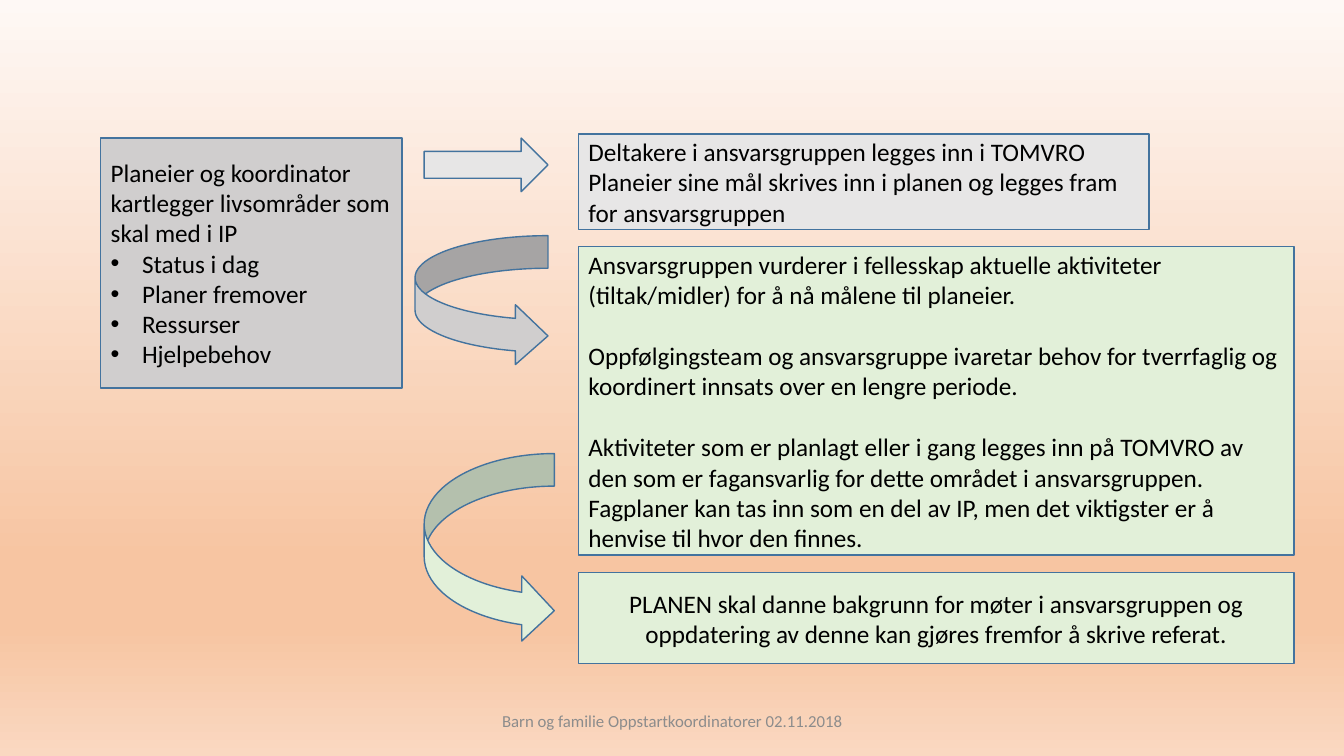
from lxml.etree import SubElement
from pptx import Presentation
from pptx.dml.color import RGBColor
from pptx.enum.shapes import MSO_SHAPE
from pptx.enum.text import MSO_ANCHOR, PP_ALIGN
from pptx.oxml.ns import qn
from pptx.util import Cm, Pt

COLORS = {
    "dark gray": "D0CECE", "light gray": "E7E6E6", "green": "E2F0D9",
    "outline": "43739E", "text": "000000", "footer": "8C8C8C",
}
BACKGROUND_STOPS = [(0, "FEF8F5"), (74, "F7C5A2"), (83, "F7C5A2"), (100, "FAD8C1")]

MAPPING = [
    "Planeier og koordinator kartlegger livsområder som skal med i IP",
    "Status i dag",
    "Planer fremover",
    "Ressurser",
    "Hjelpebehov",
]
PARTICIPANTS = [
    "Deltakere i ansvarsgruppen legges inn i TOMVRO",
    "Planeier sine mål skrives inn i planen og legges fram for ansvarsgruppen",
]
ACTIVITIES = [
    "Ansvarsgruppen vurderer i fellesskap aktuelle aktiviteter (tiltak/midler) "
    "for å nå målene til planeier.",
    "Oppfølgingsteam og ansvarsgruppe ivaretar behov for tverrfaglig og "
    "koordinert innsats over en lengre periode.",
    "Aktiviteter som er planlagt eller i gang legges inn på TOMVRO av den som er "
    "fagansvarlig for dette området i ansvarsgruppen.",
    "Fagplaner kan tas inn som en del av IP, men det viktigster er å henvise til "
    "hvor den finnes.",
]
MEETINGS = [
    "PLANEN skal danne bakgrunn for møter i ansvarsgruppen og oppdatering av denne "
    "kan gjøres fremfor å skrive referat.",
]
FOOTER = ["Barn og familie Oppstartkoordinatorer 02.11.2018"]

# Left, top, width and height in centimetres
STEP_LEFT, STEP_WIDTH = 14.58, 18.03
MAPPING_AREA = (2.54, 3.48, 7.59, 6.3)
PARTICIPANTS_AREA = (STEP_LEFT, 3.38, 14.38, 2.41)
ACTIVITIES_AREA = (STEP_LEFT, 6.22, STEP_WIDTH, 7.77)
MEETINGS_AREA = (STEP_LEFT, 14.43, STEP_WIDTH, 2.29)
FOOTER_AREA = (11.23, 17.65, 11.43, 1.02)
ARROWS = [
    (MSO_SHAPE.RIGHT_ARROW, (10.69, 3.48, 3.12, 1.35), "light gray", []),
    (MSO_SHAPE.CURVED_RIGHT_ARROW, (10.46, 5.94, 3.35, 3.28), "dark gray",
     [0.25, 0.46, 0.25]),
    (MSO_SHAPE.CURVED_RIGHT_ARROW, (10.69, 11.43, 3.28, 4.78), "green", []),
]
BULLET_INDENT = Cm(0.79)
BLANK_LINE = Pt(22)


def paint_background(slide):
    fill = slide.background.fill
    fill.gradient()
    fill.gradient_angle = 270
    stops = slide.element.find(".//" + qn("a:gsLst"))
    for stop in list(stops):
        stops.remove(stop)
    for percent, color in BACKGROUND_STOPS:
        stop = SubElement(stops, qn("a:gs"), pos=str(percent * 1000))
        SubElement(stop, qn("a:srgbClr"), val=color)


def add_outlined(slide, kind, area, color):
    shape = slide.shapes.add_shape(kind, *map(Cm, area))
    shape.shadow.inherit = False
    shape.fill.solid()
    shape.fill.fore_color.rgb = RGBColor.from_string(COLORS[color])
    shape.line.color.rgb = RGBColor.from_string(COLORS["outline"])
    shape.line.width = Pt(1)
    return shape


def write(shape, lines, align=PP_ALIGN.LEFT, size=18, color="text"):
    frame = shape.text_frame
    frame.word_wrap = True
    frame.vertical_anchor = MSO_ANCHOR.MIDDLE
    frame.text = "\n".join(lines)
    for paragraph in frame.paragraphs:
        paragraph.alignment = align
        font = paragraph.runs[0].font
        font.name = "Calibri"
        font.size = Pt(size)
        font.color.rgb = RGBColor.from_string(COLORS[color])
    return frame.paragraphs


def add_bullet(paragraph):
    paragraph.alignment = PP_ALIGN.JUSTIFY
    properties = paragraph._p.get_or_add_pPr()
    properties.set("marL", str(BULLET_INDENT))
    properties.set("indent", str(-BULLET_INDENT))
    SubElement(properties, qn("a:buFont"), typeface="Arial")
    SubElement(properties, qn("a:buChar"), char="•")


def add_box(slide, area, color, lines, align=PP_ALIGN.LEFT):
    return write(add_outlined(slide, MSO_SHAPE.RECTANGLE, area, color), lines, align)


def main():
    presentation = Presentation()
    presentation.slide_width, presentation.slide_height = Cm(33.87), Cm(19.05)
    slide = presentation.slides.add_slide(presentation.slide_layouts[6])
    paint_background(slide)

    mapping = add_box(slide, MAPPING_AREA, "dark gray", MAPPING)
    for topic in mapping[1:]:
        add_bullet(topic)
    add_box(slide, PARTICIPANTS_AREA, "light gray", PARTICIPANTS)
    add_box(slide, MEETINGS_AREA, "green", MEETINGS, PP_ALIGN.CENTER)
    activities = add_box(slide, ACTIVITIES_AREA, "green", ACTIVITIES)
    for section in activities[1:3]:
        section.space_before = BLANK_LINE

    for kind, area, color, adjustments in ARROWS:
        arrow = add_outlined(slide, kind, area, color)
        for index, value in enumerate(adjustments):
            arrow.adjustments[index] = value

    footer = slide.shapes.add_textbox(*map(Cm, FOOTER_AREA))
    write(footer, FOOTER, PP_ALIGN.CENTER, 12, "footer")
    presentation.save("out.pptx")


if __name__ == "__main__":
    main()
